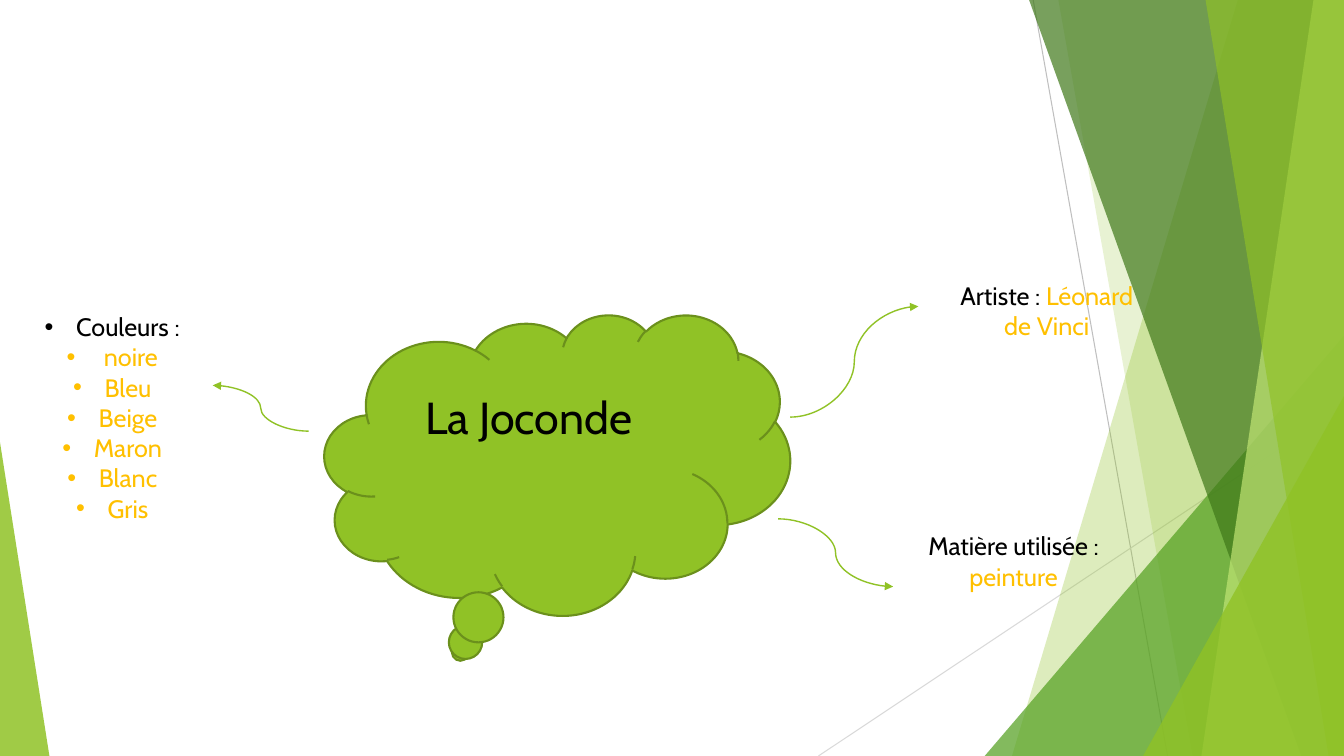
import dataclasses

import lxml.etree
import pptx
import pptx.dml.color
import pptx.enum.shapes
import pptx.enum.text
import pptx.oxml.ns
import pptx.util

Pt = pptx.util.Pt
SHAPE = pptx.enum.shapes.MSO_SHAPE
CONNECTOR = pptx.enum.shapes.MSO_CONNECTOR
ALIGN = pptx.enum.text.PP_ALIGN
qn = pptx.oxml.ns.qn


@dataclasses.dataclass(frozen=True)
class Theme:
    font: str = "Cabin"
    topic_size: int = 32
    note_size: int = 18
    ink: str = "000000"
    answer: str = "FFC000"
    green: str = "90C226"
    outline: str = "6B901C"
    leaf: str = "54A021"
    forest: str = "3F7819"
    lime: str = "C0E474"
    ray: str = "BFBFBF"
    pale_ray: str = "D9D9D9"


theme = Theme()
rgb = pptx.dml.color.RGBColor.from_string


def write(shape, paragraphs, size=theme.note_size, align=ALIGN.CENTER, bullets=False):
    """Fill a shape with paragraphs, each a list of (text, colour) runs."""
    frame = shape.text_frame
    frame.word_wrap = True
    frame.auto_size = pptx.enum.text.MSO_AUTO_SIZE.NONE
    frame.vertical_anchor = pptx.enum.text.MSO_ANCHOR.TOP
    for index, runs in enumerate(paragraphs):
        paragraph = frame.add_paragraph() if index else frame.paragraphs[0]
        paragraph.alignment = align
        for text, colour in runs:
            run = paragraph.add_run()
            run.text = text
            run.font.name = theme.font
            run.font.size = Pt(size)
            run.font.color.rgb = rgb(colour)
        if bullets:
            properties = paragraph.runs[0].font and paragraph._p.get_or_add_pPr()
            properties.set("marL", str(Pt(22.5)))
            properties.set("indent", str(-Pt(22.5)))
            lxml.etree.SubElement(properties, qn("a:buFont"), typeface="Arial")
            lxml.etree.SubElement(properties, qn("a:buChar"), char="•")


def connect(kind, start, end, colour, width):
    """Draw a shadowless connector between two points."""
    connector = slide.shapes.add_connector(kind, *map(Pt, start + end))
    connector.line.color.rgb = rgb(colour)
    connector.line.width = Pt(width)
    lxml.etree.SubElement(connector.element.spPr, qn("a:effectLst"))
    return connector


WIDTH, HEIGHT = 960, 540
deck = pptx.Presentation()
deck.slide_width, deck.slide_height = Pt(WIDTH), Pt(HEIGHT)
slide = deck.slides.add_slide(deck.slide_layouts[5])

# Thin rays behind the facets
connect(CONNECTOR.STRAIGHT, (738, 0), (834, HEIGHT), theme.ray, 0.75)
connect(CONNECTOR.STRAIGHT, (WIDTH, 290), (584.6, HEIGHT), theme.pale_ray, 0.75)

# Facets: (top x, bottom x) bands reach the right edge,
# (left, top, width, apex) triangles reach the bottom edge
facets = [
    ((884.2, 722.9), theme.green, 30),
    ((756, 851.8), theme.green, 20),
    ((703.4, 239.8, 256.6, 1), theme.leaf, 72),
    ((735.1, 929.5), theme.forest, 70),
    ((938.2, 858.2), theme.lime, 70),
    ((861.1, 949), theme.green, 65),
    ((816.5, 283, 143.5, 1), theme.green, 80),
    ((0, 316, 35.3, 0), theme.green, 85),
]
for geometry, colour, opacity in facets:
    if len(geometry) == 2:
        top_x, bottom_x = geometry
        band = slide.shapes.build_freeform(Pt(top_x), 0)
        corners = [(WIDTH, 0), (WIDTH, HEIGHT), (bottom_x, HEIGHT)]
        band.add_line_segments([(Pt(x), Pt(y)) for x, y in corners], close=True)
        facet = band.convert_to_shape()
    else:
        left, top, width, apex = geometry
        facet = slide.shapes.add_shape(
            SHAPE.ISOSCELES_TRIANGLE, Pt(left), Pt(top), Pt(width), Pt(HEIGHT - top))
        facet.adjustments[0] = apex
    facet.shadow.inherit = False
    facet.line.fill.background()
    facet.fill.solid()
    facet.fill.fore_color.rgb = rgb(colour)
    tint = facet.element.spPr.find(qn("a:solidFill"))[0]
    lxml.etree.SubElement(tint, qn("a:alpha"), val=str(opacity * 1000))

# Central thought cloud with the topic in front of it
cloud = slide.shapes.add_shape(
    SHAPE.CLOUD_CALLOUT, Pt(231.8), Pt(224.6), Pt(332.6), Pt(214.6))
cloud.shadow.inherit = False
cloud.fill.solid()
cloud.fill.fore_color.rgb = rgb(theme.green)
cloud.line.color.rgb = rgb(theme.outline)
cloud.line.width = Pt(1.5)

topic = slide.shapes.title
topic.left, topic.top, topic.width, topic.height = Pt(296.6), Pt(275), Pt(213.8), Pt(46)
write(topic, [[("La Joconde", theme.ink)]], size=theme.topic_size, align=ALIGN.LEFT)
cloud.element.addnext(topic.element)

# Branches: arrow start, arrow end, note box, paragraphs, bullets
colours = [" noire", "Bleu", "Beige", "Maron", "Blanc", "Gris"]
branches = [
    ((564.5, 298), (656, 218.9), (667.4, 196.6, 160.6, 51),
     [[("Artiste : ", theme.ink), ("Léonard de Vinci", theme.answer)]], False),
    ((555.8, 370.6), (638, 419), (643.7, 375.6, 160.6, 51),
     [[("Matière utilisée : ", theme.ink), ("peinture", theme.answer)]], False),
    ((220.5, 308), (152, 275.3), (12.2, 219, 136, 160),
     [[("Couleurs :", theme.ink)]] + [[(name, theme.answer)] for name in colours], True),
]
for start, end, box, paragraphs, bullets in branches:
    arrow = connect(CONNECTOR.CURVE, start, end, theme.green, 1)
    stroke = arrow.element.spPr.find(qn("a:ln"))
    lxml.etree.SubElement(stroke, qn("a:tailEnd"), type="triangle")
    note = slide.shapes.add_textbox(*map(Pt, box))
    write(note, paragraphs, bullets=bullets)

deck.save("out.pptx")
